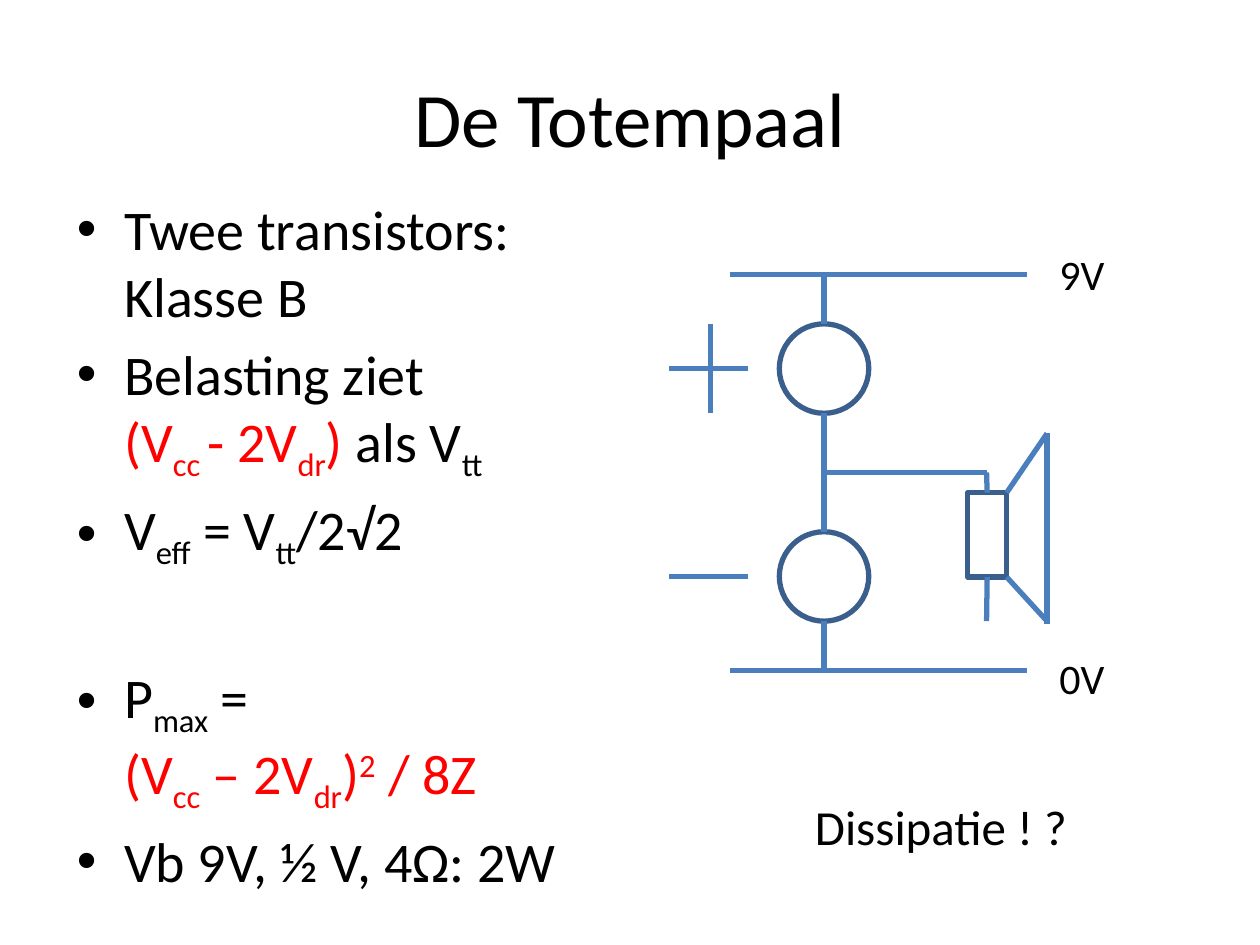
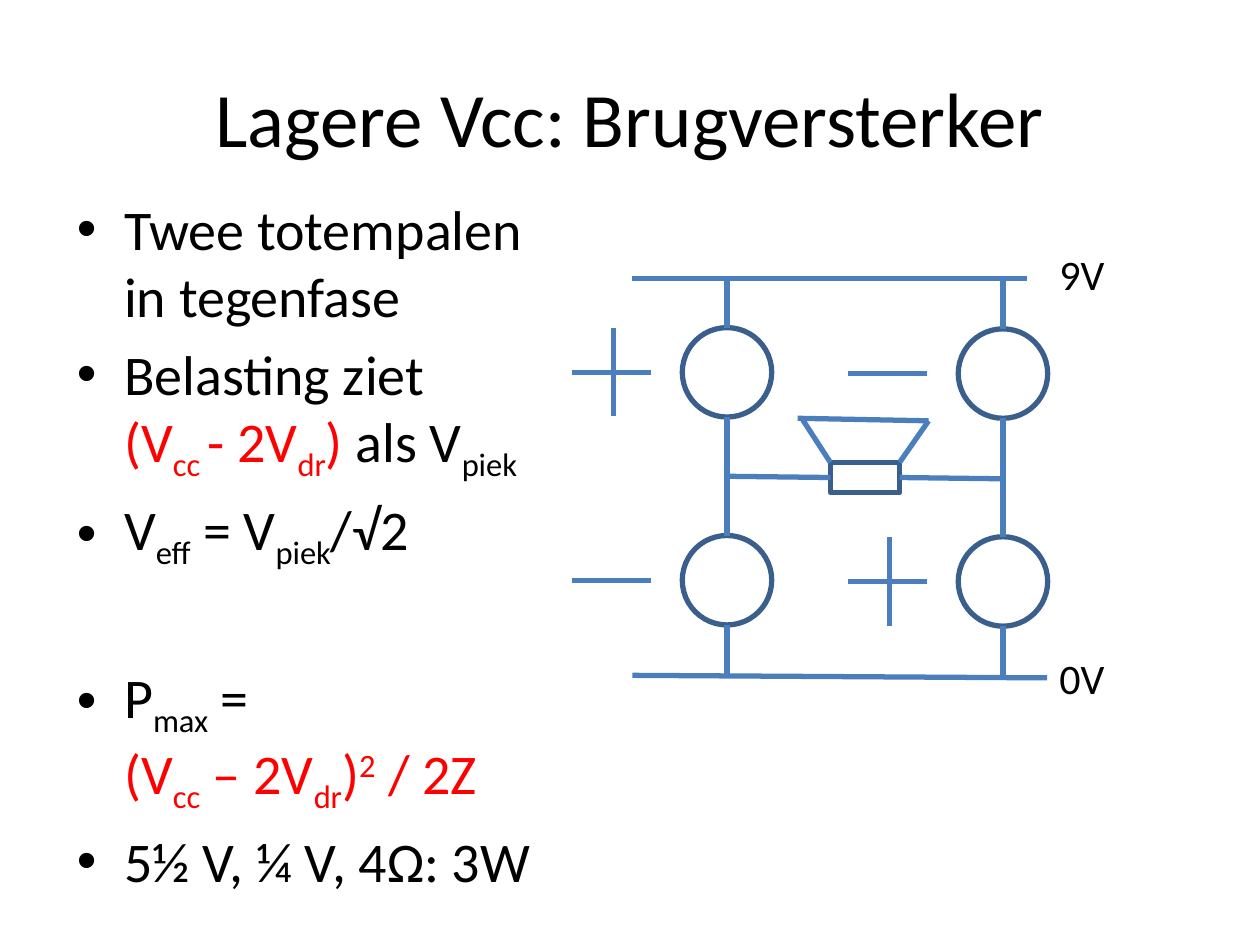
from dataclasses import dataclass
from itertools import starmap

from lxml import etree
from pptx import Presentation
from pptx import util as u
from pptx.dml.color import RGBColor
from pptx.enum import shapes, text
from pptx.oxml.ns import qn


@dataclass(frozen=True)
class Theme:
    """Colours, type sizes and line width shared by the slides."""
    ink: RGBColor = RGBColor(0, 0, 0)
    accent: RGBColor = RGBColor(0xFF, 0, 0)
    wire: RGBColor = RGBColor(0x4B, 0x7E, 0xBC)
    outline: RGBColor = RGBColor(0x3A, 0x5F, 0x8C)
    font: str = "Calibri"
    title: int = 44
    body: int = 32
    note: int = 28
    label: int = 24
    stroke: int = 3
    section_gap: int = 52


THEME = Theme()
BASELINES = {"sub": "-25000", "sup": "30000"}


def place(shape, box):
    """Move a shape to a box of left, top, width and height in inches."""
    shape.left, shape.top, shape.width, shape.height = map(u.Inches, box)


def add_span(para, words, size, colour=THEME.ink, script=None):
    """Add one formatted run, optionally lowered or raised."""
    span = para.add_run()
    span.text = words
    span.font.name = THEME.font
    span.font.size = u.Pt(size)
    span.font.color.rgb = colour
    if script:
        span._r.get_or_add_rPr().set("baseline", BASELINES[script])


def add_label(page, box, words, size=THEME.label):
    """Write a short label in a text box."""
    label = page.shapes.add_textbox(*map(u.Inches, box))
    label.text_frame.word_wrap = True
    add_span(label.text_frame.paragraphs[0], words, size)


def add_wire(page, start, end):
    """Draw a straight wire between two points in inches."""
    wire = page.shapes.add_connector(
        shapes.MSO_CONNECTOR.STRAIGHT, *map(u.Inches, (*start, *end)))
    wire.line.color.rgb = THEME.wire
    wire.line.width = u.Pt(THEME.stroke)
    etree.SubElement(wire._element.spPr, qn("a:effectLst"))
    return wire


def add_part(page, kind, box):
    """Draw the open outline of a circuit part."""
    part = page.shapes.add_shape(kind, *map(u.Inches, box))
    part.shadow.inherit = False
    part.fill.background()
    part.line.color.rgb = THEME.outline
    part.line.width = u.Pt(THEME.stroke)
    return part


def add_sign(page, left, middle, sign):
    """Draw a plus or minus centred on a height."""
    add_wire(page, (left + 0.63, middle), (left, middle))
    if sign == "+":
        add_wire(page, (left + 0.33, middle - 0.35), (left + 0.33, middle + 0.35))


def add_totem(page, left, top, signs):
    """Draw two stacked transistors, their wires and their input signs."""
    size, lead, pitch = 0.71, 0.39, 1.65
    axis = left + 1.23
    wire_start = top
    for row, sign in enumerate(signs):
        circle_top = top + lead + row * pitch
        add_part(page, shapes.MSO_SHAPE.OVAL,
                 (axis - size / 2, circle_top, size, size))
        add_wire(page, (axis, wire_start), (axis, circle_top))
        add_sign(page, left, circle_top + size / 2, sign)
        wire_start = circle_top + size
    add_wire(page, (axis, wire_start), (axis, wire_start + lead))


def add_speaker(page, box, cone, leads):
    """Draw a coil with cone strokes relative to it and leads joined to its sides."""
    left, top = box[:2]
    coil = add_part(page, shapes.MSO_SHAPE.RECTANGLE, box)

    def add_stroke(start, end):
        """Draw one cone stroke."""
        add_wire(page, *((left + x, top + y) for x, y in (start, end)))

    list(starmap(add_stroke, cone))
    for side, start in leads.items():
        add_wire(page, start, start).end_connect(coil, side)


def add_rails(page, rails):
    """Draw the supply rails with their voltages."""
    for rail, voltage, label_top in zip(rails, ("9V", "0V"), (1.92, 5.13)):
        add_wire(page, *rail)
        add_label(page, (8.31, label_top, 0.79, 0.5), voltage)


def formula_list(opening, swing, root, divisor, example):
    """Return the bullets, each a list of lines made of spans."""
    red = THEME.accent
    return [
        [[(line,)] for line in opening],
        [[("Belasting ziet ",)],
         [("(V", red), ("cc ", red, "sub"), ("- 2V", red), ("dr", red, "sub"),
          (") ", red), ("als V",), (swing, THEME.ink, "sub")]],
        [[("V",), ("eff", THEME.ink, "sub"), (" = V",),
          (swing, THEME.ink, "sub"), (root,)]],
        [[("P",), ("max", THEME.ink, "sub"), (" = ",)],
         [("(V", red), ("cc", red, "sub"), (" – 2V", red), ("dr", red, "sub"),
          (")", red), ("2", red, "sup"), (f" / {divisor}", red)]],
        [[(example,)]],
    ]


def add_page(deck, title, body_width, bullets):
    """Add a slide with a title and a bullet list."""
    page = deck.slides.add_slide(deck.slide_layouts[1])
    heading, body = page.placeholders
    place(heading, (0.5, 0.3, 9, 1.25))
    add_span(heading.text_frame.paragraphs[0], title, THEME.title)
    place(body, (0.51, 1.49, body_width, 5.8))
    frame = body.text_frame
    frame.auto_size = text.MSO_AUTO_SIZE.NONE
    for index, lines in enumerate(bullets):
        para = frame.add_paragraph() if index else frame.paragraphs[0]
        if lines[0][0][0] == "P":
            para.space_before = u.Pt(THEME.section_gap)
        for row, spans in enumerate(lines):
            if row:
                para.add_line_break()
            for words, *style in spans:
                add_span(para, words, THEME.body, *style)
    return page


def totem_slide(deck):
    """Build the slide on the single totem pole."""
    page = add_page(deck, "De Totempaal", 4.57, formula_list(
        ("Twee transistors: ", "Klasse B"), "tt", "/2√2", "8Z",
        "Vb 9V, ½ V, 4Ω: 2W"))
    add_rails(page, [((5.79, y), (8.15, y)) for y in (2.18, 5.32)])
    add_totem(page, 5.31, 2.18, "+-")
    add_wire(page, (6.54, 3.75), (7.83, 3.75))
    add_speaker(
        page, (7.68, 3.91, 0.31, 0.67),
        [((0.31, 0), (0.63, -0.47)), ((0.63, -0.47), (0.63, 1.04)),
         ((0.31, 0.67), (0.63, 1.02))],
        {0: (7.83, 3.75), 2: (7.83, 4.93)})
    add_label(page, (6.37, 6.27, 2.36, 0.57), "Dissipatie ! ?", THEME.note)


def bridge_slide(deck):
    """Build the slide on the bridge amplifier."""
    page = add_page(deck, "Lagere Vcc: Brugversterker", 4.7, formula_list(
        ("Twee totempalen ", "in tegenfase"), "piek", "/√2", "2Z",
        "5½ V, ¼ V, 4Ω: 3W"))
    add_rails(page, [((5.02, 2.21), (8.15, 2.21)), ((5.02, 5.36), (8.31, 5.38))])
    add_totem(page, 4.54, 2.21, "+-")
    add_totem(page, 6.73, 2.22, "-+")
    add_speaker(
        page, (6.59, 3.67, 0.55, 0.24),
        [((0, 0), (-0.22, -0.34)), ((-0.26, -0.35), (0.78, -0.33)),
         ((0.78, -0.33), (0.55, 0))],
        {1: (5.77, 3.78), 3: (7.96, 3.8)})


def main():
    """Build and save the deck."""
    deck = Presentation()
    deck.slide_width, deck.slide_height = u.Inches(10), u.Inches(7.5)
    totem_slide(deck)
    bridge_slide(deck)
    deck.save("out.pptx")


if __name__ == "__main__":
    main()
